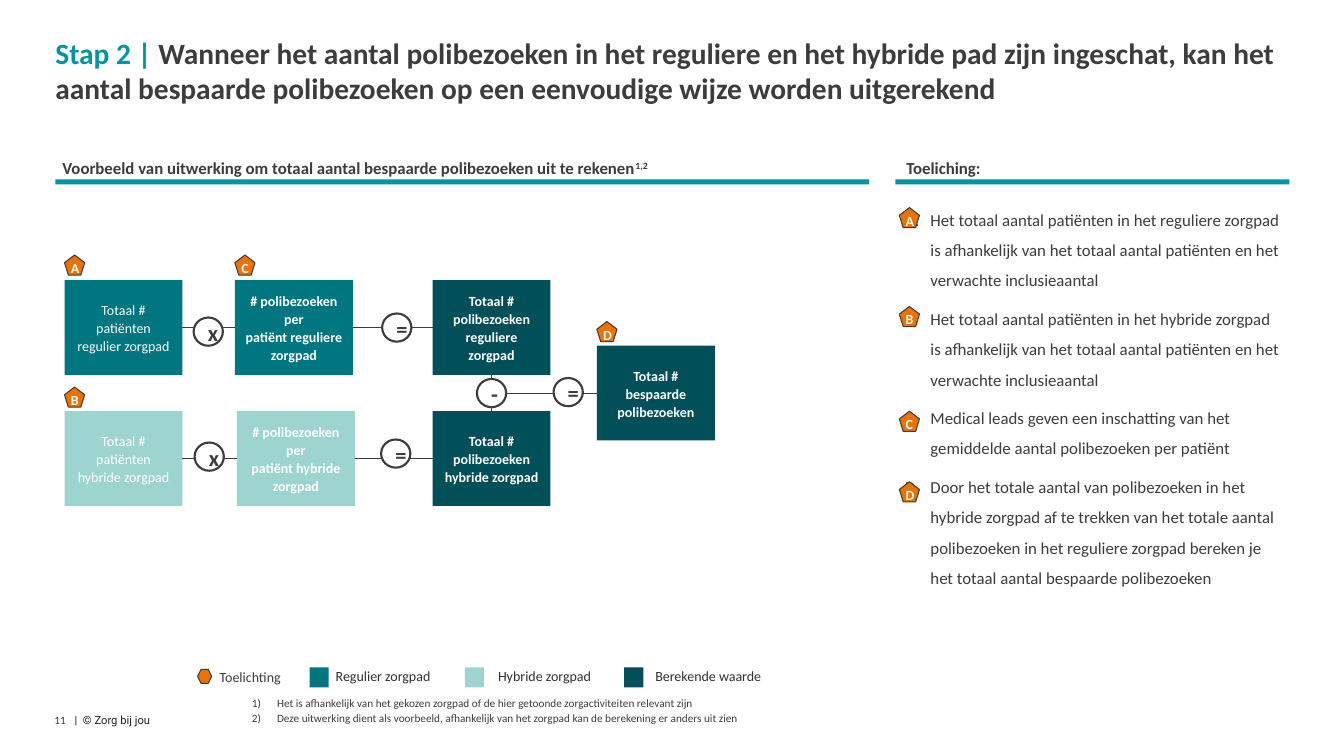
import pptx
import pptx.dml.color
import pptx.enum.shapes
import pptx.enum.text
import pptx.oxml.ns
import pptx.util
import lxml.etree

SHAPES = pptx.enum.shapes.MSO_SHAPE
ANCHOR = pptx.enum.text.MSO_ANCHOR
ALIGN = pptx.enum.text.PP_ALIGN

# Palette
ACCENT, REGULAR, HYBRID, COMPUTED = "0096A1", "007680", "9DD4CF", "004F59"
BADGE, DARK, WHITE, LEGEND_TEXT = "EB7100", "3C3C3C", "FFFFFF", "313131"

# Grid: each column and row is a tenth of an inch
COLUMNS, ROWS = 133.3, 75
TOP, LEFT_SIDE, BOTTOM, RIGHT_SIDE = range(4)


def color(hex_string):
    return pptx.dml.color.RGBColor.from_string(hex_string)


def add_xml(parent, tag, **attributes):
    return lxml.etree.SubElement(parent, pptx.oxml.ns.qn(tag), attributes)


class SlideBuilder:
    """Holds the style and the current slide; lengths are grid columns and rows."""

    font = "Calibri"

    def __init__(self, presentation):
        presentation.slide_width = pptx.util.Inches(13.33)
        presentation.slide_height = pptx.util.Inches(7.5)
        self.column = presentation.slide_width / COLUMNS
        self.row = presentation.slide_height / ROWS
        self.slide = presentation.slides.add_slide(presentation.slide_layouts[5])

    def place(self, left, top, width, height):
        return (round(left * self.column), round(top * self.row),
                round(width * self.column), round(height * self.row))

    def set_text(self, shape, texts, size, text_color=DARK, bold=False, align=ALIGN.LEFT,
                 spacing=1.0, before=0, numbering=None, font=None,
                 anchor=ANCHOR.TOP, inset=(0, 0)):
        frame = shape.text_frame
        frame.word_wrap = True
        frame.vertical_anchor = anchor
        frame.margin_left = frame.margin_right = round(inset[0] * self.column)
        frame.margin_top = frame.margin_bottom = round(inset[1] * self.row)
        for index, text in enumerate(texts):
            paragraph = frame.add_paragraph() if index else frame.paragraphs[0]
            paragraph.text = text
            paragraph.alignment = align
            paragraph.line_spacing = spacing
            if index and before:
                paragraph.space_before = pptx.util.Pt(before)
            if numbering:
                properties = paragraph._p.get_or_add_pPr()
                indent = round(2.5 * self.column)
                properties.set("marL", str(indent))
                properties.set("indent", str(-indent))
                add_xml(properties, "a:buFont", typeface="+mj-lt")
                add_xml(properties, "a:buAutoNum", type=numbering)
            paragraph.font.name = font or self.font
            paragraph.font.size = pptx.util.Pt(size)
            paragraph.font.bold = bold
            paragraph.font.color.rgb = color(text_color)

    def title(self, box, parts, size):
        title = self.slide.shapes.title
        title.left, title.top, title.width, title.height = self.place(*box)
        self.set_text(title, [""], size, bold=True)
        title.text_frame.auto_size = pptx.enum.text.MSO_AUTO_SIZE.NONE
        for text, text_color in parts:
            run = title.text_frame.paragraphs[0].add_run()
            run.text = text
            run.font.color.rgb = color(text_color)

    def text(self, box, texts, size, **style):
        shape = self.slide.shapes.add_textbox(*self.place(*box))
        self.set_text(shape, texts, size, **style)
        return shape

    def shape(self, kind, box, fill, line=None):
        shape = self.slide.shapes.add_shape(kind, *self.place(*box))
        shape.shadow.inherit = False
        shape.fill.solid()
        shape.fill.fore_color.rgb = color(fill)
        if line:
            shape.line.color.rgb = color(DARK)
            shape.line.width = pptx.util.Pt(line)
        else:
            shape.line.fill.background()
        return shape

    def label(self, shape, texts, size, text_color=WHITE, bold=True):
        self.set_text(shape, texts, size, text_color, bold, ALIGN.CENTER, 1.06,
                      anchor=ANCHOR.MIDDLE, inset=(1, 1))
        return shape

    def step(self, left, top, fill, *texts, bold=True):
        shape = self.shape(SHAPES.RECTANGLE, (left, top, 11.7, 9.4), fill)
        return self.label(shape, texts, 10, bold=bold)

    def operator(self, left, top, sign):
        shape = self.shape(SHAPES.FLOWCHART_CONNECTOR, (left, top, 2.9, 2.8), WHITE, 1.5)
        return self.label(shape, [sign], 16, DARK)

    def badge(self, left, top, letter):
        shape = self.shape(SHAPES.REGULAR_PENTAGON, (left, top, 2, 2), BADGE, 0.75)
        return self.label(shape, [letter], 10)

    def connect(self, begin, begin_side, end, end_side):
        """Join two shapes; without a begin side, start at the right edge of a circle."""
        line = self.slide.shapes.add_connector(
            pptx.enum.shapes.MSO_CONNECTOR.STRAIGHT, begin.left + begin.width,
            begin.top + begin.height // 2, end.left, end.top)
        if begin_side is not None:
            line.begin_connect(begin, begin_side)
        line.end_connect(end, end_side)
        line.line.color.rgb = color(DARK)
        line.line.width = pptx.util.Pt(0.75)
        add_xml(line._element.spPr, "a:effectLst")


def main():
    presentation = pptx.Presentation()
    builder = SlideBuilder(presentation)

    # Title
    builder.title((5.5, 3.5, 122.4, 3.7), [
        ("Stap 2 | ", ACCENT),
        ("Wanneer het aantal polibezoeken in het reguliere en het hybride pad zijn "
         "ingeschat, kan het aantal bespaarde polibezoeken op een eenvoudige wijze "
         "worden uitgerekend", DARK)], 21)

    # Explanation panel
    panel = builder.shape(SHAPES.RECTANGLE, (88.8, 18.8, 39.2, 50), WHITE)
    builder.set_text(panel, [
        "Het totaal aantal patiënten in het reguliere zorgpad is afhankelijk van het "
        "totaal aantal patiënten en het verwachte inclusieaantal",
        "Het totaal aantal patiënten in het hybride zorgpad is afhankelijk van het "
        "totaal aantal patiënten en het verwachte inclusieaantal",
        "Medical leads geven een inschatting van het gemiddelde aantal polibezoeken "
        "per patiënt",
        "Door het totale aantal van polibezoeken in het hybride zorgpad af te trekken "
        "van het totale aantal polibezoeken in het reguliere zorgpad bereken je het "
        "totaal aantal bespaarde polibezoeken",
    ], 12, spacing=1.5, before=6, numbering="alphaUcPeriod", inset=(1, 1))

    # Section headings with rules
    headings = [
        (5.2, 77.5, 5.5, 80.7,
         "Voorbeeld van uitwerking om totaal aantal bespaarde polibezoeken uit te rekenen",
         "1,2"),
        (88.9, 26.9, 88.8, 39.1, "Toeliching:", None)]
    for left, width, rule_left, rule_width, heading, note in headings:
        box = builder.text((left, 15.4, width, 2.7), [heading], 12, bold=True,
                           anchor=ANCHOR.BOTTOM, inset=(1, 0.5))
        if note:
            run = box.text_frame.paragraphs[0].add_run()
            run.text = note
            run.font._element.set("baseline", "30000")
        builder.shape(SHAPES.RECTANGLE, (rule_left, 17.8, rule_width, 0.5), ACCENT)

    # Calculation steps
    upper, lower = 27.8, 40.8
    regular_patients = builder.step(6.4, upper, REGULAR,
                                    "Totaal # patiënten regulier zorgpad", bold=False)
    hybrid_patients = builder.step(6.4, lower, HYBRID,
                                   "Totaal # patiënten hybride zorgpad", bold=False)
    regular_visits = builder.step(23.3, upper, REGULAR, "# polibezoeken per",
                                  "patiënt reguliere zorgpad")
    hybrid_visits = builder.step(23.5, lower, HYBRID, "# polibezoeken per",
                                 "patiënt hybride zorgpad")
    regular_total = builder.step(42.9, upper, COMPUTED,
                                 "Totaal # polibezoeken reguliere zorgpad")
    hybrid_total = builder.step(42.9, lower, COMPUTED,
                                "Totaal # polibezoeken hybride zorgpad")
    saved_visits = builder.step(59.2, (upper + lower) / 2, COMPUTED,
                                "Totaal # bespaarde polibezoeken")

    # Connectors and operators
    for patients, visits, total in [(regular_patients, regular_visits, regular_total),
                                    (hybrid_patients, hybrid_visits, hybrid_total)]:
        builder.connect(patients, RIGHT_SIDE, visits, LEFT_SIDE)
        builder.connect(visits, RIGHT_SIDE, total, LEFT_SIDE)
    builder.connect(regular_total, BOTTOM, hybrid_total, TOP)
    minus = builder.operator(47.3, 37.6, "-")
    builder.connect(minus, None, saved_visits, LEFT_SIDE)
    for left, top, sign in [(19.2, 31.5, "x"), (37.9, 31.1, "="), (19.3, 43.9, "x"),
                            (37.8, 43.6, "="), (54.9, 37.5, "=")]:
        builder.operator(left, top, sign)

    # Letter badges in the diagram and the panel
    for left, top, letter in [(6.4, 25.3, "A"), (6.4, 38.4, "B"), (23.3, 25.3, "C"),
                              (59.2, 31.9, "D"), (89.2, 20.6, "A"), (89.2, 30.4, "B"),
                              (89.2, 40.8, "C"), (89.2, 47.8, "D")]:
        builder.badge(left, top, letter)

    # Legend
    builder.shape(SHAPES.HEXAGON, (19.6, 66.4, 1.4, 1.4), BADGE, 0.75)
    builder.text((20.8, 65.8, 13.8, 2.7), ["Toelichting"], 10, inset=(1, 0.5))
    for left, label_left, fill, label in [(30.7, 33.3, REGULAR, "Regulier zorgpad"),
                                          (46.1, 49.4, HYBRID, "Hybride zorgpad"),
                                          (61.9, 65, COMPUTED, "Berekende waarde")]:
        builder.shape(SHAPES.RECTANGLE, (left, 66.2, 1.9, 2), fill)
        builder.text((label_left, 66.2, 19.3, 1.7), [label], 10, text_color=LEGEND_TEXT)

    # Footnotes and footer
    builder.text((24, 69, 60.3, 2.9), [
        "Het is afhankelijk van het gekozen zorgpad of de hier getoonde zorgactiviteiten "
        "relevant zijn",
        "Deze uitwerking dient als voorbeeld, afhankelijk van het zorgpad kan de "
        "berekening er anders uit zien",
    ], 8, spacing=1.06, numbering="arabicParenR", anchor=ANCHOR.MIDDLE, inset=(1, 0))
    builder.text((5.4, 70.8, 3.4, 1.3), ["11"], 8)
    builder.text((7.4, 70.8, 58.6, 1.3), ["|  © Zorg bij jou"], 8,
                 text_color="202124", font="Roboto")

    presentation.save("out.pptx")


if __name__ == "__main__":
    main()
